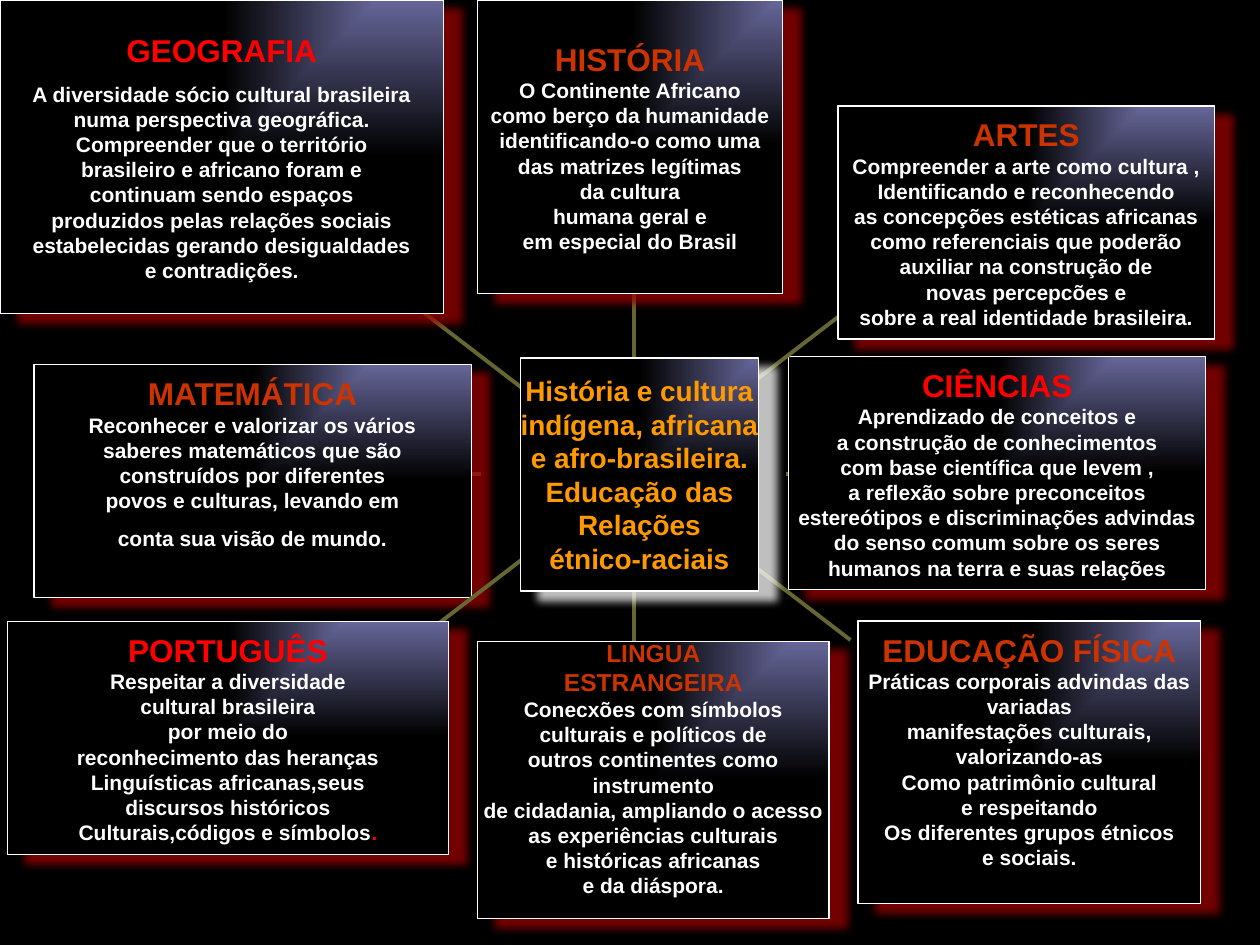
from lxml import etree
from pptx import Presentation
from pptx.dml.color import RGBColor
from pptx.enum.shapes import MSO_CONNECTOR, MSO_SHAPE
from pptx.enum.text import MSO_ANCHOR, PP_ALIGN
from pptx.oxml import parse_xml
from pptx.oxml.ns import qn
from pptx.util import Inches, Pt

NAMESPACE = 'xmlns:a="http://schemas.openxmlformats.org/drawingml/2006/main"'
RED, RUST, WHITE, ORANGE = "FF0000", "CC3300", "FFFFFF", "FF9900"
BLACK, SLATE, OLIVE, SHADOW_RED = "000000", "666699", "666633", "990000"

HUB_CENTER = (5.03, 3.76)
# Start of each spoke, as an offset from the hub's center; it ends twice as far out
DIAGONAL_X, DIAGONAL_Y, SIDE, UPRIGHT = 0.86, 0.66, 1.21, 0.93

SUBJECTS = [
    dict(title=["GEOGRAFIA"], color=RED, box=(0, 0, 3.52, 2.49),
         spoke=(-DIAGONAL_X, -DIAGONAL_Y), spaced_line=0,
         lines=["A diversidade sócio cultural brasileira",
                "numa perspectiva geográfica.",
                "Compreender que o território",
                "brasileiro e africano foram e",
                "continuam sendo espaços",
                "produzidos pelas relações sociais",
                "estabelecidas gerando desigualdades",
                "e contradições."]),
    dict(title=["MATEMÁTICA"], color=RUST, box=(0.27, 2.89, 3.47, 1.85),
         spoke=(-SIDE, 0), spaced_line=4, bottom=0.29,
         lines=["Reconhecer e valorizar os vários",
                "saberes matemáticos que são",
                "construídos por diferentes",
                "povos e culturas, levando em",
                "conta sua visão de mundo."]),
    dict(title=["PORTUGUÊS"], color=RED, box=(0.06, 4.93, 3.5, 1.85),
         spoke=(-DIAGONAL_X, DIAGONAL_Y), red_ending=".",
         lines=["Respeitar a diversidade",
                "cultural brasileira",
                "por meio do",
                "reconhecimento das heranças",
                "Linguísticas africanas,seus",
                "discursos históricos",
                "Culturais,códigos e símbolos"]),
    dict(title=["LINGUA", "ESTRANGEIRA"], color=RUST, title_size=14,
         box=(3.79, 5.09, 2.79, 2.2), spoke=(0, UPRIGHT), bottom=0.19,
         lines=["Conecxões com símbolos",
                "culturais e políticos de",
                "outros continentes como",
                "instrumento",
                "de cidadania, ampliando o acesso",
                "as experiências culturais",
                "e históricas africanas",
                "e da diáspora."]),
    dict(title=["EDUCAÇÃO FÍSICA"], color=RUST, box=(6.81, 4.93, 2.72, 2.24),
         spoke=(DIAGONAL_X, DIAGONAL_Y), bottom=0.19,
         lines=["Práticas corporais advindas das",
                "variadas",
                "manifestações culturais,",
                "valorizando-as",
                "Como patrimônio cultural",
                "e respeitando",
                "Os diferentes grupos étnicos",
                "e sociais."]),
    dict(title=["CIÊNCIAS"], color=RED, box=(6.26, 2.83, 3.31, 1.85),
         spoke=(SIDE, 0),
         lines=["Aprendizado de conceitos e",
                "a construção de conhecimentos",
                "com base científica que levem ,",
                "a reflexão sobre preconceitos",
                "estereótipos e discriminações advindas",
                "do senso comum sobre os seres",
                "humanos na terra e suas relações"]),
    dict(title=["ARTES"], color=RUST, box=(6.65, 0.84, 2.99, 1.85),
         spoke=(DIAGONAL_X, -DIAGONAL_Y),
         lines=["Compreender a arte como cultura ,",
                "Identificando e reconhecendo",
                "as concepções estéticas africanas",
                "como referenciais que poderão",
                "auxiliar na construção de",
                "novas percepcões e",
                "sobre a real identidade brasileira."]),
    dict(title=["HISTÓRIA"], color=RUST, box=(3.79, 0, 2.42, 2.33),
         spoke=(0, -UPRIGHT),
         lines=["O Continente Africano",
                "como berço da humanidade",
                "identificando-o como uma",
                "das matrizes legítimas",
                "da cultura",
                "humana geral e",
                "em especial do Brasil"]),
]
HUB = dict(title=["História e cultura", "indígena, africana", "e afro-brasileira.",
                  "Educação das", "Relações", "étnico-raciais"],
           color=ORANGE, title_size=16, box=(4.13, 2.84, 1.89, 1.85),
           shadow=WHITE, lines=[])


def rgb(value):
    return RGBColor.from_string(value)


def fill_from_corner(shape):
    """Shade from slate in the top right corner to black."""
    shape.fill.gradient()
    for stop, color, position in zip(shape.fill.gradient_stops, (SLATE, BLACK), (0, 1)):
        stop.color.rgb = rgb(color)
        stop.position = position
    gradient = shape._element.spPr.find(qn("a:gradFill"))
    gradient.remove(gradient.find(qn("a:lin")))
    gradient.append(parse_xml(
        f'<a:path {NAMESPACE} path="rect">'
        '<a:fillToRect l="100000" b="100000"/></a:path>'))


def add_shadow(shape, color):
    shape.shadow.inherit = False
    shape._element.spPr.find(qn("a:effectLst")).append(parse_xml(
        f'<a:outerShdw {NAMESPACE} blurRad="{Pt(5)}" dist="{Pt(11.2)}" '
        f'dir="{27 * 60000}" algn="ctr" rotWithShape="0">'
        f'<a:srgbClr val="{color}"><a:alpha val="75000"/></a:srgbClr></a:outerShdw>'))


def add_spoke(shapes, offset):
    start, end = ([Inches(center + reach * step) for center, step in zip(HUB_CENTER, offset)]
                  for reach in (1, 2))
    spoke = shapes.add_connector(MSO_CONNECTOR.STRAIGHT, *start, *end)
    spoke.line.color.rgb = rgb(OLIVE)
    spoke.line.width = Pt(2.25)
    etree.SubElement(spoke._element.spPr, qn("a:effectLst"))


def add_card(shapes, card):
    shape = shapes.add_shape(MSO_SHAPE.RECTANGLE, *map(Inches, card["box"]))
    fill_from_corner(shape)
    shape.line.color.rgb = rgb(WHITE)
    shape.line.width = Pt(0.75)
    add_shadow(shape, card.get("shadow", SHADOW_RED))

    frame = shape.text_frame
    frame.word_wrap = False
    frame.vertical_anchor = MSO_ANCHOR.MIDDLE
    frame.margin_left = frame.margin_top = frame.margin_right = 0
    frame.margin_bottom = Inches(card.get("bottom", 0))

    title_count = len(card["title"])
    for index, text in enumerate(card["title"] + card["lines"]):
        is_title = index < title_count
        paragraph = frame.paragraphs[0] if index == 0 else frame.add_paragraph()
        paragraph.alignment = PP_ALIGN.CENTER
        font = paragraph.font
        font.name, font.bold = "Arial", True
        font.size = Pt(card.get("title_size", 18) if is_title else 12)
        font.color.rgb = rgb(card["color"] if is_title else WHITE)
        paragraph.add_run().text = text
        if index - title_count == card.get("spaced_line"):
            paragraph.space_before = Pt(7)
    if "red_ending" in card:
        ending = paragraph.add_run()
        ending.text = card["red_ending"]
        ending.font.color.rgb = rgb(RED)


def main():
    presentation = Presentation()
    presentation.slide_width, presentation.slide_height = Inches(10), Inches(7.5)
    slide = presentation.slides.add_slide(presentation.slide_layouts[6])
    slide.background.fill.solid()
    slide.background.fill.fore_color.rgb = rgb(BLACK)

    diagram = slide.shapes.add_group_shape().shapes
    for subject in SUBJECTS:
        add_spoke(diagram, subject["spoke"])
        add_card(diagram, subject)
    add_card(diagram, HUB)
    presentation.save("out.pptx")


if __name__ == "__main__":
    main()
